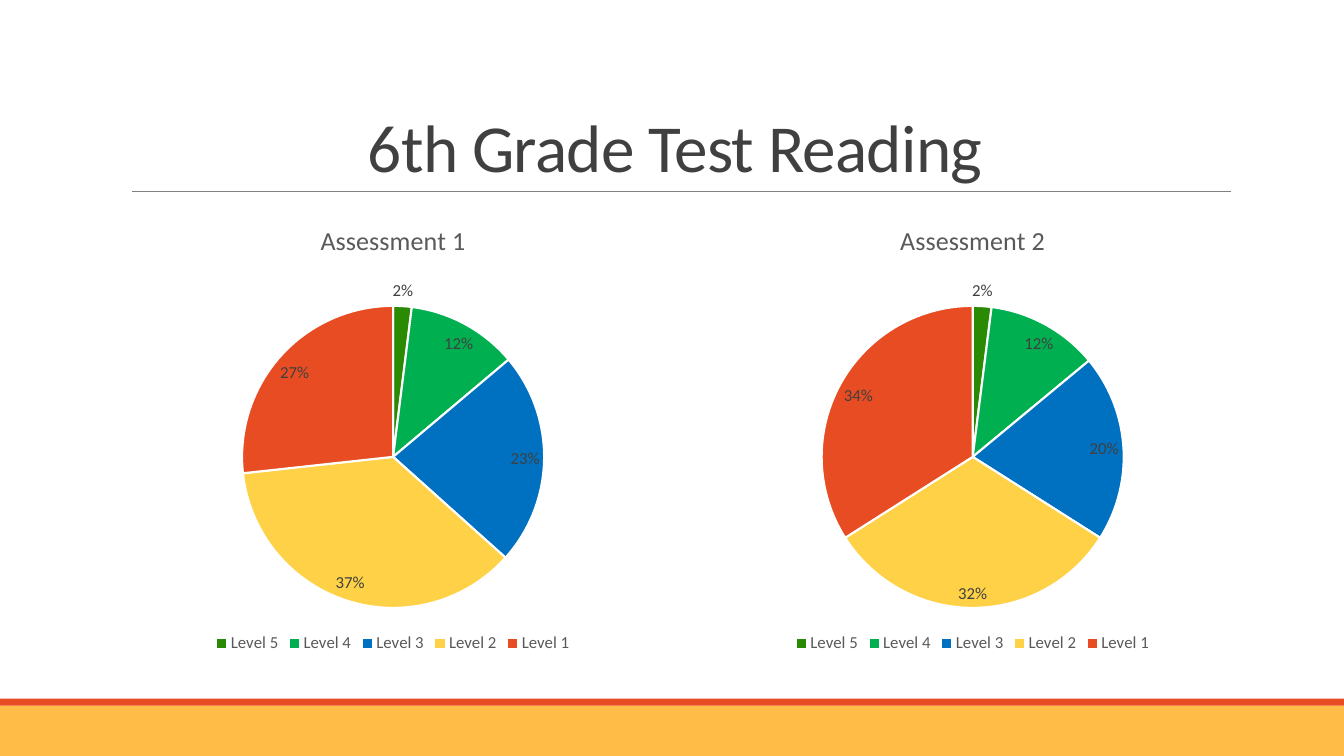
from dataclasses import dataclass

from lxml import etree
from pptx import Presentation
from pptx.chart.data import CategoryChartData
from pptx.dml.color import RGBColor
from pptx.enum.chart import XL_CHART_TYPE, XL_LABEL_POSITION as LABEL_POS, XL_LEGEND_POSITION as LEGEND_POS
from pptx.enum.shapes import MSO_CONNECTOR, MSO_SHAPE
from pptx.enum.text import MSO_ANCHOR, MSO_AUTO_SIZE, PP_ALIGN
from pptx.oxml.ns import qn
from pptx.util import Pt

WIDTH, HEIGHT = 960, 540


@dataclass(frozen=True)
class Theme:
    font: str = "Calibri"
    title_size: float = 48
    chart_title_size: float = 18.6
    label_size: float = 12
    dark: str = "404040"
    muted: str = "595959"
    rule: str = "808080"
    white: str = "FFFFFF"
    band: str = "FFBD47"
    stripe: str = "E84C22"
    levels: tuple = ("2A8A04", "00B050", "0070C0", "FFD147", "E84C22")


def rgb(value):
    return RGBColor.from_string(value)


class SlideBuilder:
    def __init__(self, slide, theme):
        self.s = slide
        self.theme = theme

    def style(self, font, size, color):
        font.name = self.theme.font
        font.size = Pt(size)
        font.bold = False
        font.color.rgb = rgb(color)

    def title(self, text, x, y, w, h):
        sp = self.s.shapes.title
        sp.left, sp.top, sp.width, sp.height = Pt(x), Pt(y), Pt(w), Pt(h)
        tf = sp.text_frame
        tf.text = text
        tf.word_wrap = True
        tf.auto_size = MSO_AUTO_SIZE.NONE
        tf.vertical_anchor = MSO_ANCHOR.BOTTOM
        p = tf.paragraphs[0]
        p.alignment = PP_ALIGN.CENTER
        p.line_spacing = 0.85
        self.style(p.font, self.theme.title_size, self.theme.dark)
        p.runs[0].font._element.set("spc", "-50")

    def bar(self, y, h, color):
        """Draw a full-width horizontal bar."""
        sp = self.s.shapes.add_shape(MSO_SHAPE.RECTANGLE, 0, Pt(y), Pt(WIDTH), Pt(h))
        sp.shadow.inherit = False
        sp.fill.solid()
        sp.fill.fore_color.rgb = rgb(color)
        sp.line.fill.background()

    def rule(self, x1, x2, y):
        line = self.s.shapes.add_connector(MSO_CONNECTOR.STRAIGHT, Pt(x1), Pt(y), Pt(x2), Pt(y))
        line.line.color.rgb = rgb(self.theme.rule)
        line.line.width = Pt(0.5)
        etree.SubElement(line._element.spPr, qn("a:effectLst"))

    def pie(self, name, categories, values, x, y, w, h):
        theme = self.theme
        data = CategoryChartData()
        data.categories = categories
        data.add_series(name, values)
        chart = self.s.shapes.add_chart(
            XL_CHART_TYPE.PIE, Pt(x), Pt(y), Pt(w), Pt(h), data).chart
        chart.font.name = theme.font
        chart.font.size = Pt(10)

        chart.has_title = True
        tf = chart.chart_title.text_frame
        tf.text = name
        self.style(tf.paragraphs[0].font, theme.chart_title_size, theme.muted)
        chart.chart_title.include_in_layout = False

        chart.has_legend = True
        chart.legend.position = LEGEND_POS.BOTTOM
        chart.legend.include_in_layout = False
        self.style(chart.legend.font, theme.label_size, theme.muted)

        plot = chart.plots[0]
        plot.vary_by_categories = True
        for i, color in enumerate(theme.levels):
            fmt = plot.series[0].points[i].format
            fmt.fill.solid()
            fmt.fill.fore_color.rgb = rgb(color)
            fmt.line.color.rgb = rgb(theme.white)
            fmt.line.width = Pt(1.5)

        labels = plot.series[0].data_labels
        labels.show_value = False
        labels.show_percentage = True
        labels.number_format = "0%"
        labels.number_format_is_linked = False
        labels.position = LABEL_POS.BEST_FIT
        self.style(labels.font, theme.label_size, theme.dark)


def main():
    prs = Presentation()
    prs.slide_width, prs.slide_height = Pt(WIDTH), Pt(HEIGHT)
    theme = Theme()
    slide = SlideBuilder(prs.slides.add_slide(prs.slide_layouts[5]), theme)

    slide.bar(504, 36, theme.band)
    slide.bar(499, 5, theme.stripe)
    slide.rule(94.5, 879, 136.8)
    slide.title("6th Grade Test Reading", 86.4, 22.5, 792, 114.3)

    levels = [f"Level {n}" for n in range(5, 0, -1)]
    assessments = {
        "Assessment 1": (2, 12, 23, 37, 27),
        "Assessment 2": (2, 12, 20, 32, 34),
    }
    for i, (name, values) in enumerate(assessments.items()):
        slide.pie(name, levels, values, 86.4 + i * 414, 145.4, 388.8, 324)

    prs.save("out.pptx")


if __name__ == "__main__":
    main()
